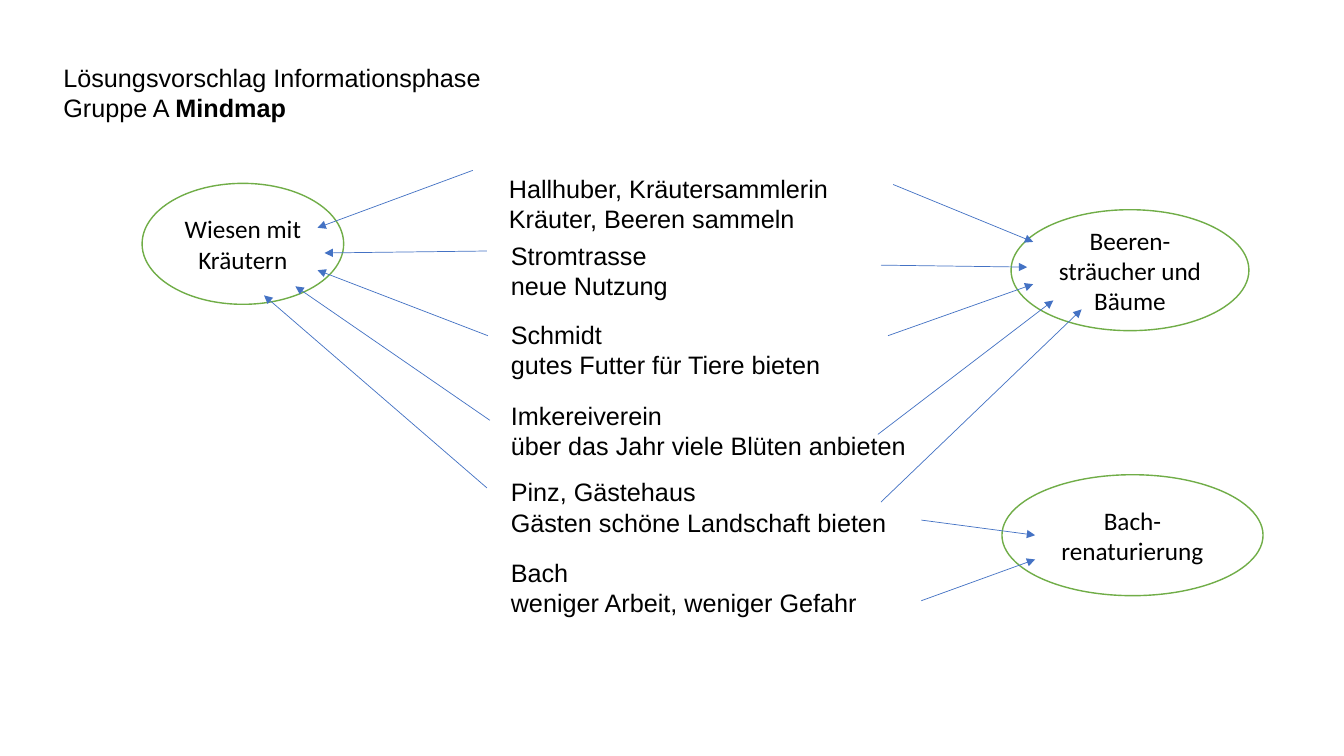
import pptx
import pptx.dml.color
import pptx.enum.shapes
import pptx.enum.text
import pptx.util
from lxml import etree
from pptx.oxml.ns import qn

Pt = pptx.util.Pt

STAKEHOLDERS = [
    ("Hallhuber, Kräutersammlerin\nKräuter, Beeren sammeln", 356.4, 120.2, 247, 51),
    ("Stromtrasse\nneue Nutzung", 357.8, 167.8, 288.7, 72.7),
    ("Schmidt\ngutes Futter für Tiere bieten", 357.8, 224.6, 288.7, 51),
    ("Imkereiverein\nüber das Jahr viele Blüten anbieten", 357.8, 282.2, 335.5, 51),
    ("Pinz, Gästehaus\nGästen schöne Landschaft bieten", 357.8, 337, 347, 51),
    ("Bach\nweniger Arbeit, weniger Gefahr", 357.8, 394.6, 288.7, 51),
]

MEASURES = [
    ("Wiesen mit Kräutern", 101.5, 131, 144),
    ("Beeren-sträucher und Bäume", 722.2, 149.8, 169.9),
    ("Bach-renaturierung", 715.7, 339.1, 186.5),
]
MEASURE_HEIGHT = 86.4

MEADOW_ARROWS = [
    (337.7, 121.7, 226.8, 162.7),
    (347.8, 179.3, 231.8, 180.7),
    (348.5, 239.8, 226.8, 193),
    (349.9, 300.2, 211, 204.5),
    (347.8, 348.5, 188.6, 211),
]
BERRY_ARROWS = [
    (638, 131.8, 738, 172.8),
    (629.3, 189.4, 733.7, 190.8),
    (634.3, 239.8, 738, 203),
    (627.1, 310.3, 752.4, 214.6),
    (629.3, 358.6, 772.6, 221),
]
STREAM_ARROWS = [
    (658.1, 371.5, 739.4, 382.3),
    (658.1, 429.1, 739.4, 399.6),
]


def color(hex_value):
    """Return the colour for a hex string."""
    return pptx.dml.color.RGBColor.from_string(hex_value)


def style_text(text_frame, font_name):
    """Give every run the slide's text size and colour."""
    for paragraph in text_frame.paragraphs:
        for run in paragraph.runs:
            run.font.name = font_name
            run.font.size = Pt(18)
            run.font.color.rgb = color("000000")


def add_label(slide, text, left, top, width, height):
    """Add a wrapped text box and return its text frame."""
    label = slide.shapes.add_textbox(Pt(left), Pt(top), Pt(width), Pt(height))
    text_frame = label.text_frame
    text_frame.word_wrap = True
    text_frame.auto_size = pptx.enum.text.MSO_AUTO_SIZE.SHAPE_TO_FIT_TEXT
    text_frame.text = text
    style_text(text_frame, "Arial")
    return text_frame


def add_title(slide):
    """Add the heading with its bold last word."""
    heading = add_label(slide, "Lösungsvorschlag Informationsphase\nGruppe A ",
                        38.2, 41, 712.8, 51)
    topic = heading.paragraphs[1].add_run()
    topic.text = "Mindmap"
    style_text(heading, "Arial")
    topic.font.bold = True


def add_measure(slide, text, left, top, width):
    """Add a green outlined ellipse with centred text."""
    measure = slide.shapes.add_shape(
        pptx.enum.shapes.MSO_SHAPE.OVAL,
        Pt(left), Pt(top), Pt(width), Pt(MEASURE_HEIGHT))
    measure.shadow.inherit = False
    measure.fill.solid()
    measure.fill.fore_color.rgb = color("FFFFFF")
    measure.line.color.rgb = color("70AD47")
    measure.line.width = Pt(1)
    text_frame = measure.text_frame
    text_frame.word_wrap = True
    text_frame.vertical_anchor = pptx.enum.text.MSO_ANCHOR.MIDDLE
    text_frame.text = text
    text_frame.paragraphs[0].alignment = pptx.enum.text.PP_ALIGN.CENTER
    style_text(text_frame, "Calibri")


def add_arrow(slide, start_x, start_y, end_x, end_y):
    """Add a thin blue line with a triangle at its end."""
    arrow = slide.shapes.add_connector(
        pptx.enum.shapes.MSO_CONNECTOR.STRAIGHT,
        Pt(start_x), Pt(start_y), Pt(end_x), Pt(end_y))
    arrow.line.color.rgb = color("4472C4")
    arrow.line.width = Pt(0.5)
    etree.SubElement(arrow.line._get_or_add_ln(), qn("a:tailEnd"), type="triangle")
    etree.SubElement(arrow._element.spPr, qn("a:effectLst"))


def main():
    """Build the mind map slide and save it."""
    presentation = pptx.Presentation()
    presentation.slide_width = Pt(960)
    presentation.slide_height = Pt(540)
    slide = presentation.slides.add_slide(presentation.slide_layouts[6])
    add_title(slide)
    for stakeholder in STAKEHOLDERS:
        add_label(slide, *stakeholder)
    for measure in MEASURES:
        add_measure(slide, *measure)
    for arrow in MEADOW_ARROWS + BERRY_ARROWS + STREAM_ARROWS:
        add_arrow(slide, *arrow)
    presentation.save("out.pptx")


if __name__ == "__main__":
    main()
